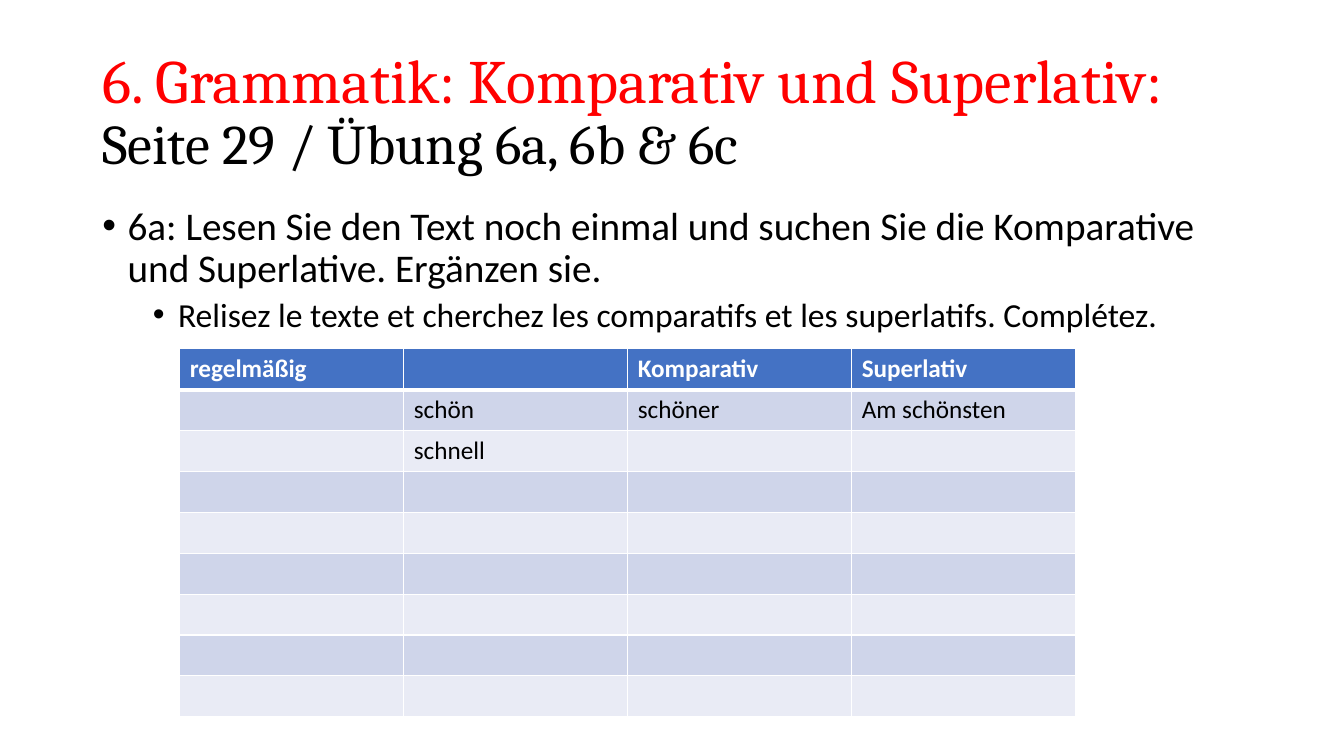
from dataclasses import dataclass

from lxml import etree
from pptx import Presentation
from pptx.dml.color import RGBColor
from pptx.enum import text as t
from pptx.oxml import ns
from pptx.util import Pt


@dataclass(frozen=True)
class Theme:
    heading_font: str = "Cambria"
    body_font: str = "Calibri"
    accent: str = "FF0000"
    ink: str = "000000"
    paper: str = "FFFFFF"
    header: str = "4472C4"
    bands: tuple = ("CFD5EA", "E9EBF5")
    topic_size: float = 44
    exercise_size: float = 40
    task_sizes: tuple = (28, 24)
    table_size: float = 18
    thin: float = 1
    thick: float = 3


THEME = Theme()

TOPIC = "6. Grammatik: Komparativ und Superlativ: "
EXERCISE = "Seite 29 / Übung 6a, 6b & 6c"
TASKS = [
    "6a: Lesen Sie den Text noch einmal und suchen Sie die Komparative "
    "und Superlative. Ergänzen sie.",
    "Relisez le texte et cherchez les comparatifs et les superlatifs. Complétez.",
]
COMPARISONS = [
    ["regelmäßig", "", "Komparativ", "Superlativ"],
    ["", "schön", "schöner", "Am schönsten"],
    ["", "schnell", "", ""],
] + [[""] * 4 for _ in range(6)]


def place(part, box):
    part.left, part.top, part.width, part.height = (Pt(length) for length in box)


def add_run(paragraph, wording, font, size, color, bold=False):
    run = paragraph.add_run()
    run.text = wording
    run.font.name = font
    run.font.size = Pt(size)
    run.font.bold = bold
    run.font.color.rgb = RGBColor.from_string(color)


def add_heading(slide, box):
    heading = slide.shapes.title
    place(heading, box)
    frame = heading.text_frame
    frame.auto_size = t.MSO_AUTO_SIZE.NONE
    frame.vertical_anchor = t.MSO_ANCHOR.MIDDLE
    line = frame.paragraphs[0]
    line.alignment = t.PP_ALIGN.LEFT
    line.line_spacing = 0.9
    add_run(line, TOPIC, THEME.heading_font, THEME.topic_size, THEME.accent)
    add_run(line, EXERCISE, THEME.heading_font, THEME.exercise_size, THEME.ink)


def set_bullet(paragraph, indent):
    """Hang a round bullet 18 pt to the left of the indent."""
    props = paragraph._p.get_or_add_pPr()
    props.set("marL", str(Pt(indent)))
    props.set("indent", str(Pt(-18)))
    etree.SubElement(props, ns.qn("a:buFont"), typeface="Arial")
    etree.SubElement(props, ns.qn("a:buChar"), char="•")


def add_tasks(slide, box):
    tasks = slide.placeholders[1]
    place(tasks, box)
    frame = tasks.text_frame
    frame.auto_size = t.MSO_AUTO_SIZE.NONE
    for level, wording in enumerate(TASKS):
        task = frame.add_paragraph() if level else frame.paragraphs[0]
        task.level = level
        task.line_spacing = 0.9
        task.space_before = Pt(5 if level else 10)
        set_bullet(task, 18 + 36 * level)
        add_run(task, wording, THEME.body_font, THEME.task_sizes[level], THEME.ink)


def set_borders(cell, bottom, top):
    props = cell._tc.get_or_add_tcPr()
    widths = {"lnL": THEME.thin, "lnR": THEME.thin, "lnT": top, "lnB": bottom}
    for index, (side, width) in enumerate(widths.items()):
        border = etree.Element(ns.qn(f"a:{side}"), w=str(Pt(width)))
        fill = etree.SubElement(border, ns.qn("a:solidFill"))
        etree.SubElement(fill, ns.qn("a:srgbClr"), val=THEME.paper)
        props.insert(index, border)


def add_comparison_table(slide, box):
    rows, columns = len(COMPARISONS), len(COMPARISONS[0])
    table = slide.shapes.add_table(
        rows, columns, *(Pt(length) for length in box)
    ).table
    for column in table.columns:
        column.width = Pt(box[2] / columns)
    for row in table.rows:
        row.height = Pt(box[3] / rows)
    for r, words in enumerate(COMPARISONS):
        is_header = r == 0
        fill = THEME.header if is_header else THEME.bands[(r - 1) % 2]
        for c, word in enumerate(words):
            cell = table.cell(r, c)
            cell.fill.solid()
            cell.fill.fore_color.rgb = RGBColor.from_string(fill)
            set_borders(
                cell,
                bottom=THEME.thick if is_header else THEME.thin,
                top=THEME.thick if r == 1 else THEME.thin,
            )
            if word:
                add_run(
                    cell.text_frame.paragraphs[0], word, THEME.body_font,
                    THEME.table_size, THEME.paper if is_header else THEME.ink,
                    bold=is_header,
                )


def add_grammar_slide(deck):
    slide = deck.slides.add_slide(deck.slide_layouts[1])
    add_heading(slide, (66, 28.75, 828, 104.4))
    add_tasks(slide, (66, 143.75, 828, 342.6))
    add_comparison_table(slide, (128.4, 249.2, 640, 262.8))


def main():
    deck = Presentation()
    deck.slide_width, deck.slide_height = Pt(960), Pt(540)
    add_grammar_slide(deck)
    deck.save("out.pptx")


if __name__ == "__main__":
    main()
